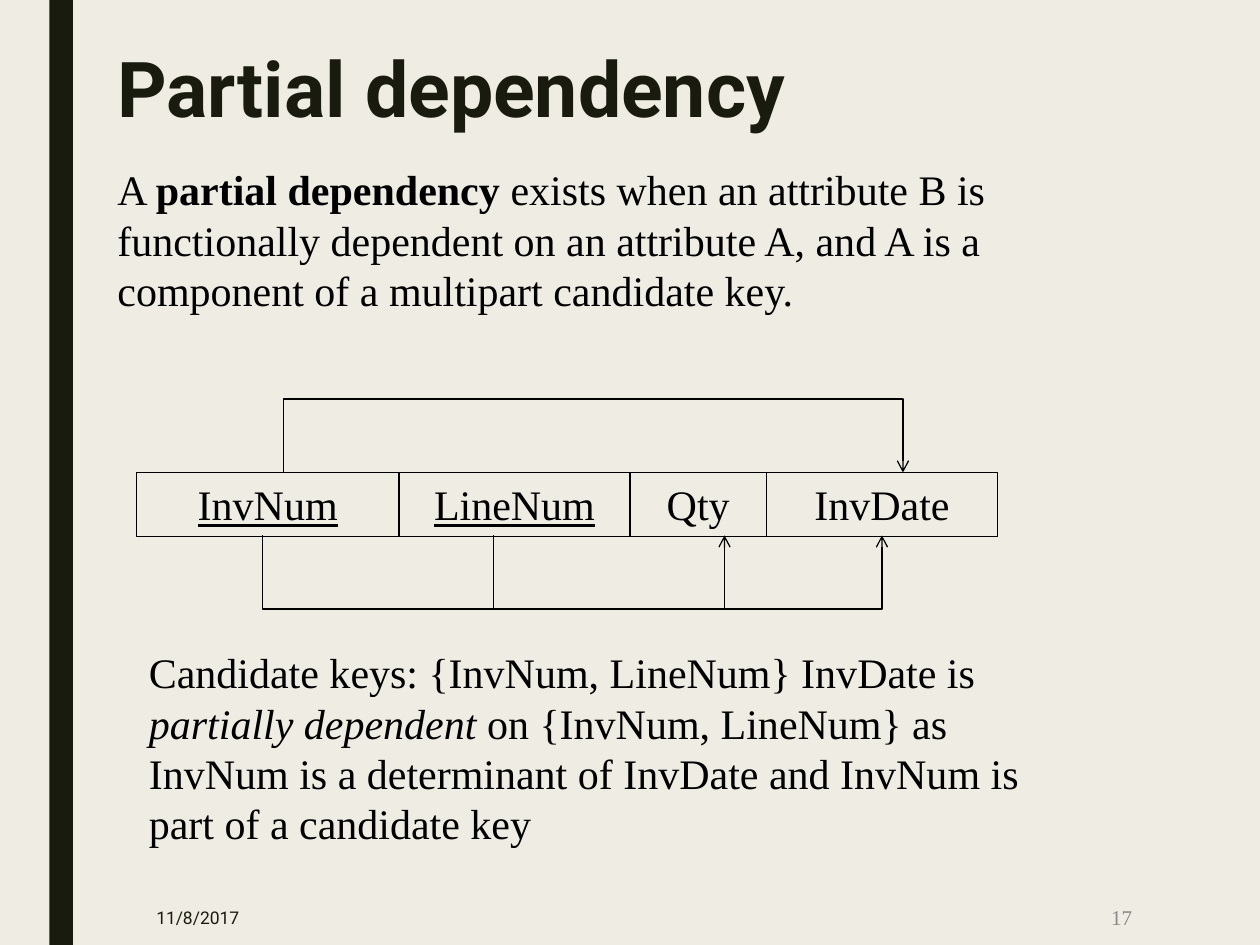
from dataclasses import dataclass

from lxml.etree import SubElement
from pptx import Presentation
from pptx.dml.color import RGBColor
from pptx.enum.shapes import MSO_SHAPE as Shape
from pptx.enum.text import MSO_ANCHOR as Anchor, MSO_AUTO_SIZE as AutoSize, PP_ALIGN as Align
from pptx.oxml.ns import qn
from pptx.util import Inches, Pt


@dataclass(frozen=True)
class Theme:
    background: str = "EFEDE3"
    dark: str = "191B0E"
    ink: str = "000000"
    muted: str = "898989"
    heading_font: str = "Roboto"
    body_font: str = "Times New Roman"
    title_size: int = 44
    body_size: int = 24
    number_size: int = 12
    date_size: int = 10
    line_width: float = 0.75


THEME = Theme()
COLUMNS, ROWS = 120, 90
WIDTH, HEIGHT = Inches(10), Inches(7.5)

TABLE_TOP, TABLE_HEIGHT = 45, 6.1
ATTRIBUTES = [  # name, first column, last column, part of the key
    ("InvNum", 13, 38, True),
    ("LineNum", 38, 60, True),
    ("Qty", 60, 73, False),
    ("InvDate", 73, 95, False),
]
DEPENDENCIES = [  # from column, to column, table edge row, turning row
    (47, 69, 51, 58),
    (25, 84, 51, 58),
    (27, 86, 45, 38),
]


def x(column):
    return round(WIDTH * column / COLUMNS)


def y(row):
    return round(HEIGHT * row / ROWS)


def place(column, row, columns, rows):
    return x(column), y(row), x(columns), y(rows)


def color(value):
    return RGBColor.from_string(value)


def write(shape, runs, *, size=THEME.body_size, font=THEME.body_font, ink=THEME.ink,
          align=Align.LEFT, anchor=Anchor.TOP, spacing=None, grow=False):
    """Fill a shape with one paragraph; runs are (text, set of styles) pairs."""
    frame = shape.text_frame
    frame.word_wrap = True
    frame.vertical_anchor = anchor
    frame.auto_size = AutoSize.SHAPE_TO_FIT_TEXT if grow else AutoSize.NONE
    paragraph = frame.paragraphs[0]
    paragraph.alignment = align
    if spacing:
        paragraph.line_spacing = spacing
    for text, styles in runs:
        run = paragraph.add_run()
        run.text = text
        run.font.name, run.font.size = font, Pt(size)
        run.font.color.rgb = color(ink)
        for style in styles:
            setattr(run.font, style, True)


def add_text(slide, area, runs, **text_format):
    write(slide.shapes.add_textbox(*place(*area)), runs, **text_format)


def outline(shape):
    shape.shadow.inherit = False
    shape.fill.background()
    shape.line.color.rgb = color(THEME.ink)
    shape.line.width = Pt(THEME.line_width)


def add_side_bar(slide):
    bar = slide.shapes.add_shape(Shape.RECTANGLE, *place(4.7, 0, 2.25, ROWS))
    bar.shadow.inherit = False
    bar.fill.solid()
    bar.fill.fore_color.rgb = color(THEME.dark)
    bar.line.fill.background()


def add_attribute(slide, name, first, last, is_key):
    box = slide.shapes.add_shape(
        Shape.RECTANGLE, *place(first, TABLE_TOP, last - first, TABLE_HEIGHT))
    outline(box)
    write(box, [(name, {"underline"} if is_key else set())], align=Align.CENTER, grow=True)


def add_dependency(slide, start, end, edge, turn):
    """Draw a three-sided arrow from one attribute to another."""
    builder = slide.shapes.build_freeform(x(start), y(edge))
    corners = [(start, turn), (end, turn), (end, edge)]
    builder.add_line_segments([(x(column), y(row)) for column, row in corners], close=False)
    arrow = builder.convert_to_shape()
    outline(arrow)
    SubElement(arrow.line._get_or_add_ln(), qn("a:tailEnd"), type="arrow")


def main():
    presentation = Presentation()
    presentation.slide_width, presentation.slide_height = WIDTH, HEIGHT
    slide = presentation.slides.add_slide(presentation.slide_layouts[6])
    slide.background.fill.solid()
    slide.background.fill.fore_color.rgb = color(THEME.background)

    add_side_bar(slide)
    add_text(slide, (10, 4.3, 94.5, 19.5), [("Partial dependency", {"bold"})],
             size=THEME.title_size, font=THEME.heading_font, ink=THEME.dark, spacing=0.89)
    add_text(slide, (13.7, 84.7, 11.9, 5.3), [("11/8/2017", set())], size=THEME.date_size,
             font=THEME.heading_font, ink=THEME.dark, anchor=Anchor.MIDDLE)
    add_text(slide, (93.25, 84.7, 15.75, 5.3), [("17", set())], size=THEME.number_size,
             ink=THEME.muted, align=Align.RIGHT, anchor=Anchor.MIDDLE)
    add_text(slide, (10, 15, 99, 15.6), [
        ("A ", set()),
        ("partial dependency", {"bold"}),
        (" exists when an attribute B is functionally dependent on an attribute A, "
         "and A is a component of a multipart candidate key.", set()),
    ], grow=True)

    for attribute in ATTRIBUTES:
        add_attribute(slide, *attribute)
    for dependency in DEPENDENCIES:
        add_dependency(slide, *dependency)

    add_text(slide, (13, 61, 91, 20.4), [
        ("Candidate keys: {InvNum, LineNum} InvDate is ", set()),
        ("partially dependent", {"italic"}),
        (" on {InvNum, LineNum} as InvNum is a determinant of InvDate "
         "and InvNum is part of a candidate key", set()),
    ], grow=True)
    presentation.save("out.pptx")


if __name__ == "__main__":
    main()
